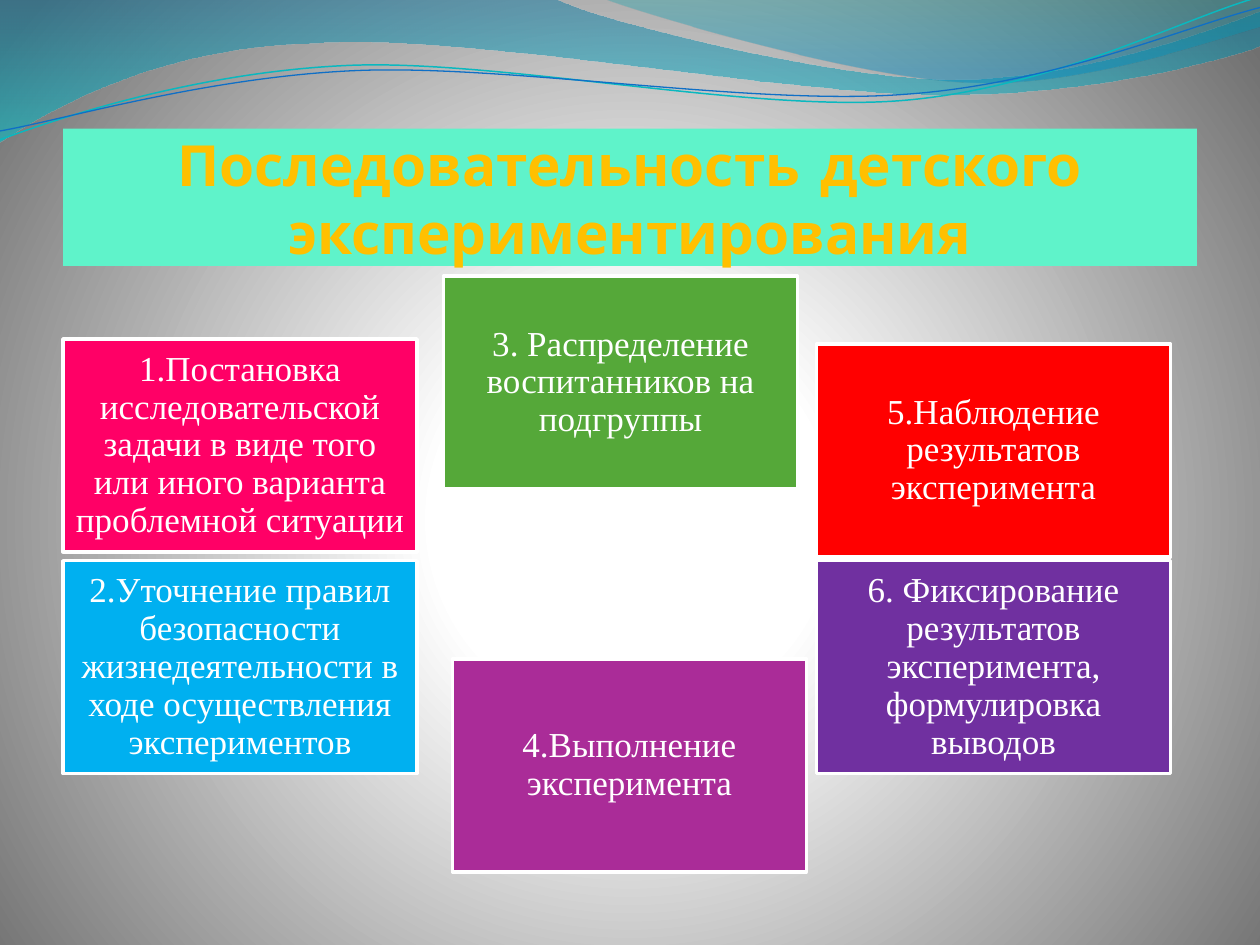
import math
from dataclasses import dataclass

from lxml import etree
from pptx import Presentation
from pptx.dml.color import RGBColor
from pptx.enum.shapes import MSO_SHAPE
from pptx.enum.text import MSO_ANCHOR, MSO_AUTO_SIZE, PP_ALIGN
from pptx.oxml import parse_xml
from pptx.oxml.ns import nsdecls, qn
from pptx.util import Inches, Pt

RECTANGLE = MSO_SHAPE.RECTANGLE
CENTER = PP_ALIGN.CENTER
MIDDLE, BOTTOM = MSO_ANCHOR.MIDDLE, MSO_ANCHOR.BOTTOM
NO_AUTOFIT = MSO_AUTO_SIZE.NONE
TITLE_ONLY_LAYOUT = 5
UNITS_PER_INCH = 1000


@dataclass(frozen=True)
class Theme:
    title_font: str = "Comic Neue"
    body_font: str = "Times New Roman"
    title_size: float = 32.4
    body_size: float = 20
    title_color: str = "FFC000"
    title_fill: str = "5FF3CA"
    white: str = "FFFFFF"
    # Gradient stops: position %, colour, opacity %
    background: tuple = ((0, "FFFFFF", 100), (25, "FFFFFF", 100), (100, "707070", 100))
    left_wave: tuple = ((0, "0074A1", 45), (100, "00C6CF", 55))
    right_wave: tuple = ((0, "00A1A9", 30), (80, "008BBF", 45))
    teal_line: str = "0AB8BF"
    blue_line: str = "0F6FC6"


THEME = Theme()
SLIDE_WIDTH, SLIDE_HEIGHT = 10, 7.5
CARD_WIDTH, CARD_HEIGHT = 2.81, 1.69
LEFT_COLUMN, RIGHT_COLUMN = 0.5, 6.48
LOWER_ROW = 4.45
CURVE_TILT = -2.7

# Step text, left, top, fill
STEPS = [
    ("1.Постановка исследовательской задачи в виде того или иного варианта "
     "проблемной ситуации", LEFT_COLUMN, 2.69, "FF0066"),
    ("3. Распределение воспитанников на подгруппы", 3.52, 2.19, "55A839"),
    ("5.Наблюдение результатов эксперимента", RIGHT_COLUMN, 2.73, "FF0000"),
    ("2.Уточнение правил безопасности жизнедеятельности в ходе осуществления "
     "экспериментов", LEFT_COLUMN, LOWER_ROW, "00B0F0"),
    ("6. Фиксирование результатов эксперимента, формулировка выводов",
     RIGHT_COLUMN, LOWER_ROW, "7030A0"),
    ("4.Выполнение эксперимента", 3.59, 5.23, "AA2C98"),
]

# Each outline has a box (left, top, width, height) and a start point,
# followed by lines (2 numbers) and Bezier curves (6 numbers)
LEFT_WAVE = ((-0.01, -0.01, 10.02, 1.14), [
    (0, 0), (4.4, -0.01), (4.76, 0.17, 6.64, 0.63, 7.58, 0.63),
    (8.53, 0.63, 9.58, 0.26, 10, 0.09), (10.01, 0.36),
    (9.83, 0.44, 8.7, 0.76, 7.46, 0.75), (6.22, 0.75, 3.82, 0.28, 2.57, 0.34),
    (1.29, 0.36, 0.46, 0.83, -0.01, 1.13), (0, 0),
])
RIGHT_WAVE = ((4.79, -0.01, 5.21, 0.7), [
    (4.79, -0.01), (5.09, 0.11, 6.82, 0.62, 7.69, 0.65),
    (8.56, 0.69, 9.61, 0.32, 10, 0.21), (10, 0), (4.79, -0.01),
])
TEAL_CURVE = ((-0.02, 0.22, 10.02, 0.71), [
    (0, 1.11), (0.48, 0.93, 1.58, 0.57, 2.77, 0.52),
    (3.95, 0.47, 5.93, 0.89, 7.13, 0.8), (8.33, 0.71, 9.38, 0.15, 9.98, -0.02),
])
BLUE_CURVE = ((-0.02, 0.3, 10.03, 0.58), [
    (0, 1.04), (0.47, 0.96, 1.64, 0.61, 2.83, 0.56),
    (4.03, 0.51, 5.97, 0.84, 7.17, 0.75), (8.36, 0.67, 9.41, 0.21, 10, 0.06),
])


def color(value):
    return RGBColor.from_string(value)


def gradient(stops, direction):
    """Make a gradient fill element from stops and a direction element."""
    marks = "".join(
        f'<a:gs pos="{position * 1000}"><a:srgbClr val="{value}">'
        f'<a:alpha val="{opacity * 1000}"/></a:srgbClr></a:gs>'
        for position, value, opacity in stops)
    return parse_xml(f'<a:gradFill {nsdecls("a")} rotWithShape="1">'
                     f'<a:gsLst>{marks}</a:gsLst>{direction}</a:gradFill>')


def set_background(slide):
    fill = slide.background.fill
    fill.solid()
    fill.fore_color.rgb = color(THEME.white)
    properties = slide.element.find(".//" + qn("p:bgPr"))
    direction = ('<a:path path="circle"><a:fillToRect l="10000" t="110000" '
                 'r="10000" b="100000"/></a:path>')
    properties.replace(properties.find(qn("a:solidFill")),
                       gradient(THEME.background, direction))


def add_freeform(shapes, outline, close, rotation=0):
    """Draw an outline of lines and Bezier curves inside its box."""
    (left, top, width, height), parts = outline
    right, bottom = left + width, top + height
    corners = [(x * UNITS_PER_INCH, y * UNITS_PER_INCH) for x, y in
               ((left, top), (right, top), (right, bottom), (left, bottom))]
    builder = shapes.build_freeform(*corners[0], scale=Inches(1) / UNITS_PER_INCH)
    builder.add_line_segments(corners[1:], close=close)
    shape = builder.convert_to_shape()
    shape.shadow.inherit = False
    shape.rotation = rotation

    # Turn slide coordinates back into the box before its rotation
    center_x, center_y = left + width / 2, top + height / 2
    cosine = math.cos(math.radians(-rotation))
    sine = math.sin(math.radians(-rotation))

    def local(x, y):
        x, y = x - center_x, y - center_y
        return (x * cosine - y * sine + width / 2,
                x * sine + y * cosine + height / 2)

    track = shape.element.spPr.find(".//" + qn("a:path"))
    for child in list(track):
        track.remove(child)
    for index, part in enumerate(parts):
        tag = "moveTo" if index == 0 else "lnTo" if len(part) == 2 else "cubicBezTo"
        command = etree.SubElement(track, qn("a:" + tag))
        for x, y in zip(part[::2], part[1::2]):
            point = etree.SubElement(command, qn("a:pt"))
            for name, value in zip("xy", local(x, y)):
                point.set(name, str(round(value * UNITS_PER_INCH)))
    if close:
        etree.SubElement(track, qn("a:close"))
    else:
        track.set("fill", "none")
    return shape


def add_wave(shapes, outline, stops):
    shape = add_freeform(shapes, outline, close=True)
    shape.line.fill.background()
    shape.fill.background()
    properties = shape.element.spPr
    properties.replace(properties.find(qn("a:noFill")),
                       gradient(stops, '<a:lin ang="5400000" scaled="1"/>'))


def add_curve(shapes, outline, line_color, width):
    shape = add_freeform(shapes, outline, close=False, rotation=CURVE_TILT)
    shape.fill.background()
    shape.line.color.rgb = color(line_color)
    shape.line.width = Pt(width)


def write_text(shape, text, font, size, text_color, anchor, margins, bold=False):
    frame = shape.text_frame
    frame.word_wrap = True
    frame.auto_size = NO_AUTOFIT
    frame.vertical_anchor = anchor
    (frame.margin_left, frame.margin_top,
     frame.margin_right, frame.margin_bottom) = map(Inches, margins)
    paragraph = frame.paragraphs[0]
    paragraph.alignment = CENTER
    run = paragraph.add_run()
    run.text = text
    run.font.name, run.font.size, run.font.bold = font, Pt(size), bold
    run.font.color.rgb = color(text_color)
    return paragraph


def add_title(slide, text):
    title = slide.shapes.title
    title.left, title.top = Inches(0.5), Inches(1.02)
    title.width, title.height = Inches(0.9 * SLIDE_WIDTH), Inches(1.09)
    title.fill.solid()
    title.fill.fore_color.rgb = color(THEME.title_fill)
    write_text(title, text, THEME.title_font, THEME.title_size, THEME.title_color,
               BOTTOM, (0, 0.05, 0, 0), bold=True)


def add_step(shapes, text, left, top, fill_color):
    card = shapes.add_shape(RECTANGLE, Inches(left), Inches(top),
                            Inches(CARD_WIDTH), Inches(CARD_HEIGHT))
    card.shadow.inherit = False
    card.fill.solid()
    card.fill.fore_color.rgb = color(fill_color)
    card.line.color.rgb = color(THEME.white)
    card.line.width = Pt(2)
    paragraph = write_text(card, text, THEME.body_font, THEME.body_size,
                           THEME.white, MIDDLE, (0.08,) * 4)
    paragraph.line_spacing = 0.9


def main():
    presentation = Presentation()
    presentation.slide_width = Inches(SLIDE_WIDTH)
    presentation.slide_height = Inches(SLIDE_HEIGHT)
    slide = presentation.slides.add_slide(presentation.slide_layouts[TITLE_ONLY_LAYOUT])
    set_background(slide)
    # Waves along the top edge
    add_wave(slide.shapes, LEFT_WAVE, THEME.left_wave)
    add_wave(slide.shapes, RIGHT_WAVE, THEME.right_wave)
    add_curve(slide.shapes, TEAL_CURVE, THEME.teal_line, 0.85)
    add_curve(slide.shapes, BLUE_CURVE, THEME.blue_line, 0.75)
    # Title and the six steps
    add_title(slide, "Последовательность детского экспериментирования")
    for step in STEPS:
        add_step(slide.shapes, *step)
    presentation.save("out.pptx")


if __name__ == "__main__":
    main()
